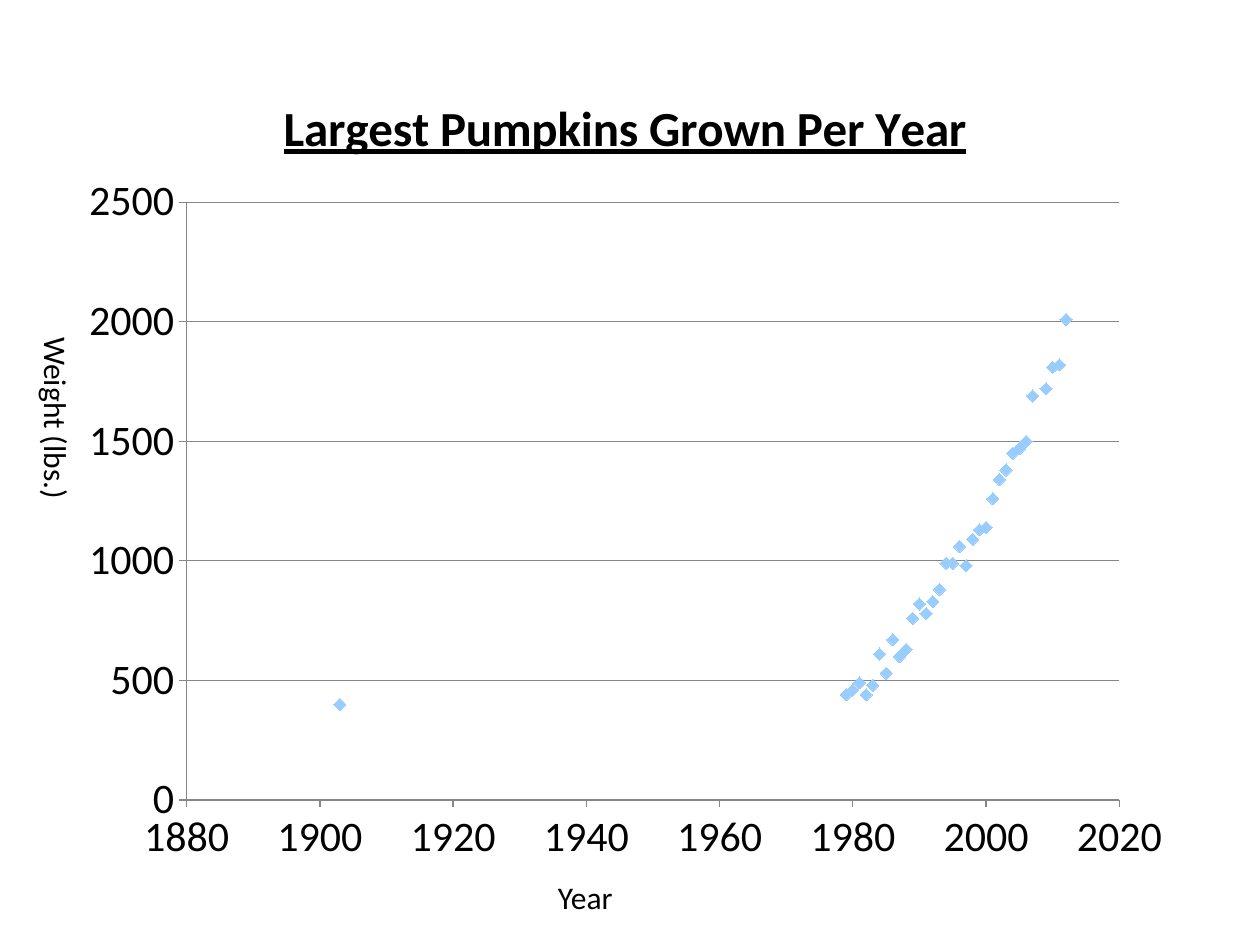
from lxml import etree
from pptx import Presentation
from pptx.chart import data
from pptx.dml.color import RGBColor
from pptx.enum import chart as charts, text
from pptx.oxml import ns
from pptx.util import Inches, Pt

FONT = "Calibri"
COLORS = {"text": "000000", "line": "868686", "marker": "99CCFF"}

# Record weight in pounds by year; 2008 has no value
YEARS = [1903] + [year for year in range(1979, 2013) if year != 2008]
WEIGHTS = [400, 440, 460, 490, 440, 480, 610, 530, 670, 600, 630, 760,
           820, 780, 830, 880, 990, 990, 1060, 980, 1090, 1130, 1140, 1260,
           1340, 1380, 1450, 1470, 1500, 1690, 1720, 1810, 1820, 2010]


def color(name):
    return RGBColor.from_string(COLORS[name])


def format_font(font, size):
    font.name = FONT
    font.size = Pt(size)
    font.color.rgb = color("text")


def format_axis(axis, maximum, minimum, step):
    axis.minimum_scale = minimum
    axis.maximum_scale = maximum
    axis.major_unit = step
    axis.major_tick_mark = charts.XL_TICK_MARK.OUTSIDE
    axis.minor_tick_mark = charts.XL_TICK_MARK.NONE
    axis.has_title = False
    axis.format.line.color.rgb = color("line")
    axis.tick_labels.number_format = "General"
    axis.tick_labels.number_format_is_linked = False
    format_font(axis.tick_labels.font, 24)


def set_plot_layout(chart, x, y, w, h):
    """Fix the inner plot area, in fractions of the chart."""
    plot_area = chart._chartSpace.chart.plotArea
    for layout in plot_area.findall(ns.qn("c:layout")):
        plot_area.remove(layout)
    layout = etree.Element(ns.qn("c:layout"))
    manual = etree.SubElement(layout, ns.qn("c:manualLayout"))
    settings = {"layoutTarget": "inner", "xMode": "edge", "yMode": "edge",
                "x": x, "y": y, "w": w, "h": h}
    for tag, value in settings.items():
        etree.SubElement(manual, ns.qn("c:" + tag)).set("val", str(value))
    plot_area.insert(0, layout)


def add_pumpkin_chart(slide, left, top, width, height):
    chart_data = data.XyChartData()
    points = chart_data.add_series("Series 1")
    for year, weight in zip(YEARS, WEIGHTS):
        points.add_data_point(year, weight)
    chart = slide.shapes.add_chart(
        charts.XL_CHART_TYPE.XY_SCATTER, Inches(left), Inches(top),
        Inches(width), Inches(height), chart_data).chart
    format_font(chart.font, 10)
    chart.has_legend = False

    # Title
    chart.has_title = True
    chart.chart_title.include_in_layout = False
    title = chart.chart_title.text_frame
    title.text = "Largest Pumpkins Grown Per Year"
    title_font = title.paragraphs[0].runs[0].font
    format_font(title_font, 28)
    title_font.bold = True
    title_font.underline = True

    # Axes and gridlines
    format_axis(chart.category_axis, 2020, 1880, 20)
    format_axis(chart.value_axis, 2500, 0, 500)
    chart.category_axis.has_major_gridlines = False
    chart.value_axis.has_major_gridlines = True
    chart.value_axis.major_gridlines.format.line.color.rgb = color("line")
    set_plot_layout(chart, 0.11, 0.17, 0.83, 0.73)

    # Markers without a joining line
    chart.plots[0].vary_by_categories = False
    series = chart.plots[0].series[0]
    series.smooth = False
    series.format.line.fill.background()
    series.marker.style = charts.XL_MARKER_STYLE.DIAMOND
    series.marker.size = 7
    series.marker.format.fill.solid()
    series.marker.format.fill.fore_color.rgb = color("marker")
    series.marker.format.line.fill.background()


def add_axis_label(slide, label, left, top, width, height, rotation=0):
    box = slide.shapes.add_textbox(Inches(left), Inches(top),
                                   Inches(width), Inches(height))
    box.rotation = rotation
    frame = box.text_frame
    frame.word_wrap = False
    frame.auto_size = text.MSO_AUTO_SIZE.SHAPE_TO_FIT_TEXT
    frame.text = label
    format_font(frame.paragraphs[0].font, 18)


def main():
    presentation = Presentation()
    presentation.slide_width = Inches(10)
    presentation.slide_height = Inches(7.5)
    slide = presentation.slides.add_slide(presentation.slide_layouts[6])

    add_pumpkin_chart(slide, 0.5, 0.5, 8.92, 6.5)
    add_axis_label(slide, "Year", 4.33, 6.92, 0.64, 0.4)
    add_axis_label(slide, "Weight (lbs.)", -0.3, 3.13, 1.5, 0.4, rotation=90)

    presentation.save("out.pptx")


if __name__ == "__main__":
    main()
